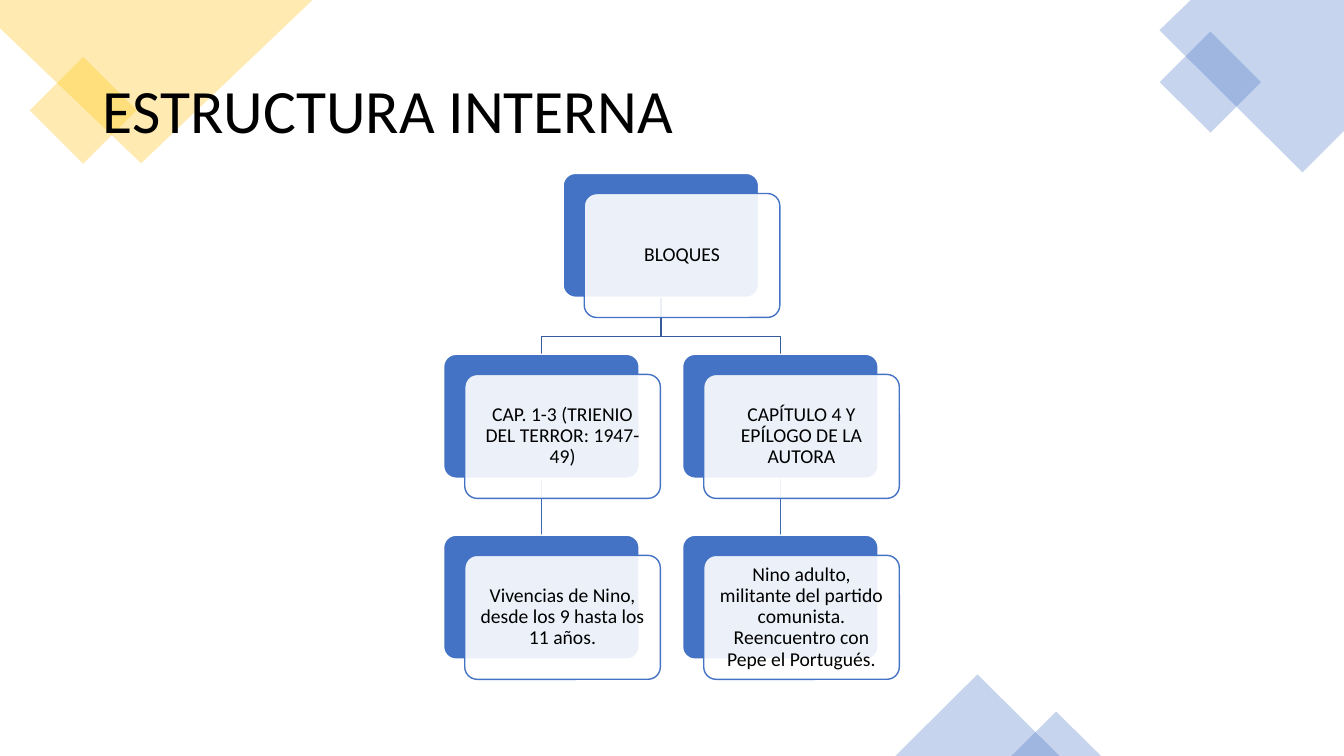
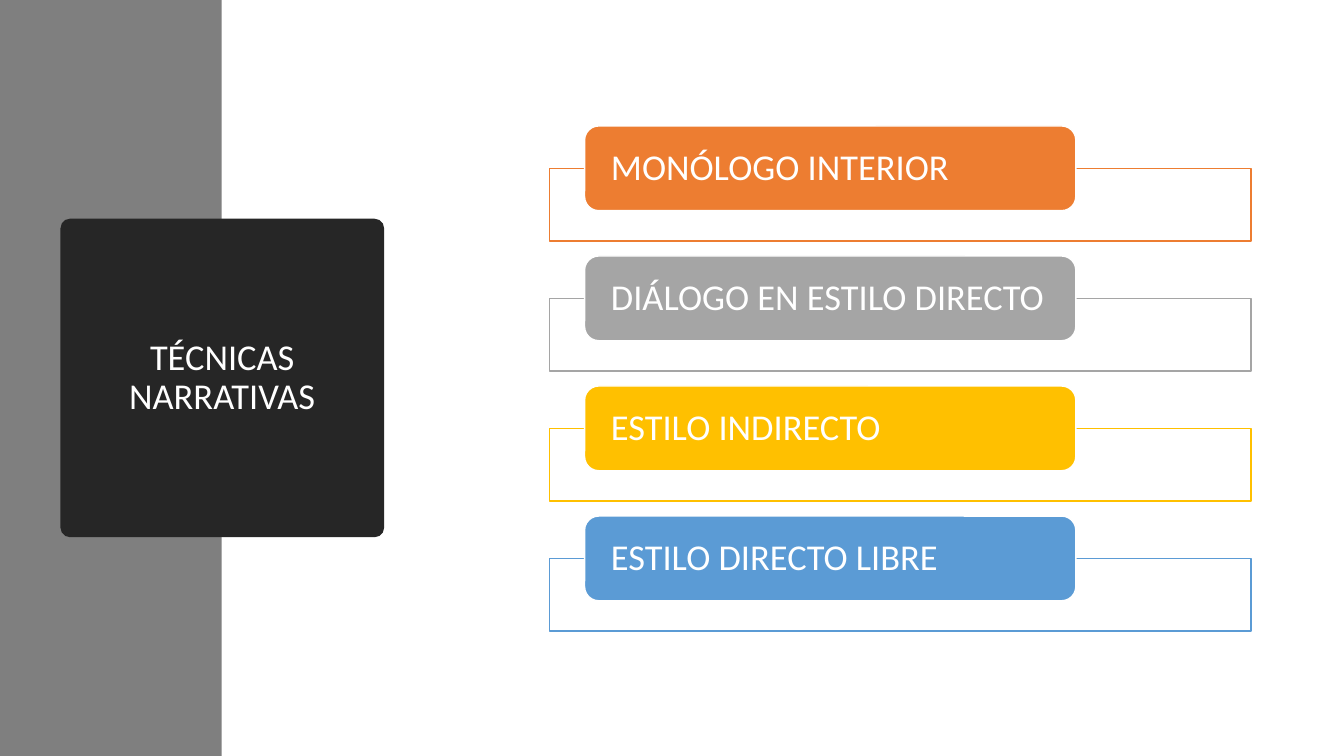
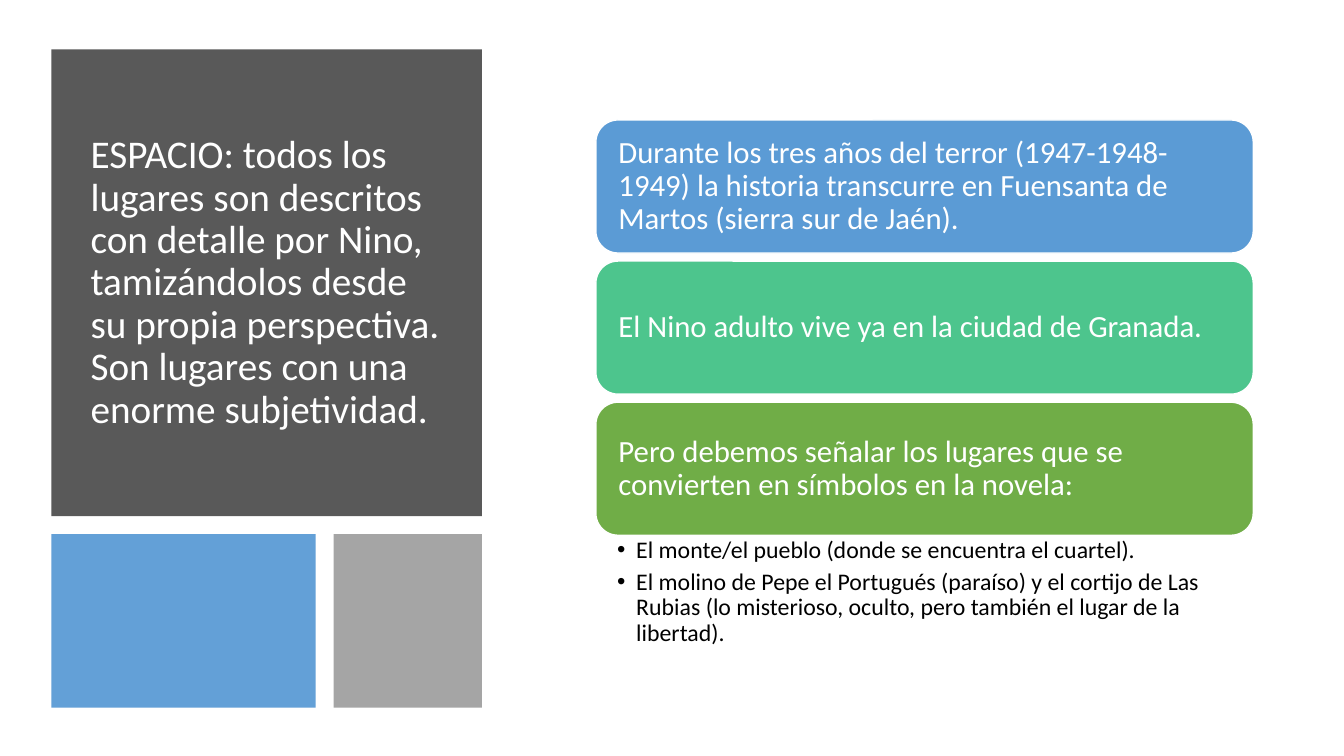
import pptx
import pptx.dml.color
import pptx.enum.shapes
import pptx.enum.text
import pptx.oxml.ns
import pptx.util
from lxml import etree

COLORS = {
    "white": "FFFFFF", "black": "000000", "blue": "4472C4", "sky": "5B9BD5",
    "gold": "FFC000", "orange": "ED7D31", "silver": "A5A5A5", "gray": "7F7F7F",
    "charcoal": "595959", "ink": "262626", "mint": "4DC58D", "green": "70AD47",
    "branch": "365B9D", "stem": "3E67B2",
}
FONT = "Calibri"
COLS, ROWS = 13.33, 7.5  # the grid has one-inch columns and rows

SHAPE = pptx.enum.shapes.MSO_SHAPE
ANCHOR = pptx.enum.text.MSO_ANCHOR
ALIGN = pptx.enum.text.PP_ALIGN
qn = pptx.oxml.ns.qn


def grid(*cells):
    return [pptx.util.Inches(c) for c in cells]


def rgb(name):
    return pptx.dml.color.RGBColor.from_string(COLORS[name])


def paint(sp, fill=None, line=None, opacity=100):
    """Set fill, opacity and outline, and drop the shadow."""
    sp.shadow.inherit = False
    if fill:
        sp.fill.solid()
        sp.fill.fore_color.rgb = rgb(fill)
        if opacity < 100:
            clr = sp._element.spPr.find(qn("a:solidFill"))[0]
            etree.SubElement(clr, qn("a:alpha"), val=str(opacity * 1000))
    else:
        sp.fill.background()
    if line:
        sp.line.color.rgb = rgb(line)
        sp.line.width = pptx.util.Pt(1)
    else:
        sp.line.fill.background()
    return sp


def add_block(slide, kind, box, fill, line=None, opacity=100, adj=None, rotation=0):
    sp = slide.shapes.add_shape(kind, *grid(*box))
    if adj is not None:
        sp.adjustments[0] = adj
    sp.rotation = rotation
    return paint(sp, fill, line, opacity)


def add_outline(slide, points, closed=True, **style):
    pts = [grid(*pt) for pt in points]
    fb = slide.shapes.build_freeform(*pts[0], scale=1.0)
    fb.add_line_segments(pts[1:], close=closed)
    return paint(fb.convert_to_shape(), **style)


def add_bullet(p, indent):
    pPr = p._p.get_or_add_pPr()
    left = pptx.util.Inches(indent)
    pPr.set("marL", str(left))
    pPr.set("indent", str(-left))
    etree.SubElement(pPr, qn("a:buFont"), typeface="Arial")
    etree.SubElement(pPr, qn("a:buChar"), char="•")


def write(sp, paragraphs, size, color, align=ALIGN.LEFT, anchor=ANCHOR.MIDDLE,
          insets=(0.1, 0.05, 0.1, 0.05), bullet=0, after=0):
    tf = sp.text_frame
    tf.word_wrap = True
    tf.vertical_anchor = anchor
    tf.margin_left, tf.margin_top, tf.margin_right, tf.margin_bottom = grid(*insets)
    for i, text in enumerate(paragraphs):
        p = tf.add_paragraph() if i else tf.paragraphs[0]
        p.alignment = align
        p.line_spacing = 0.9
        p.space_after = pptx.util.Pt(after)
        if bullet:
            add_bullet(p, bullet)
        r = p.add_run()
        r.text = text
        r.font.name = FONT
        r.font.size = pptx.util.Pt(size)
        r.font.color.rgb = rgb(color)


def add_text(slide, box, paragraphs, size, color, **style):
    write(slide.shapes.add_textbox(*grid(*box)), paragraphs, size, color, **style)


def add_corner_decor(slide):
    tint = {"opacity": 30}
    add_block(slide, SHAPE.RECTANGLE, (0.45, 0.72, 0.75, 0.75), "gold", rotation=45, **tint)
    add_outline(slide, [(0, 0), (3.1, 0), (1.4, 1.62), (0, 0.28)], fill="gold", **tint)
    add_outline(slide, [(11.81, 0), (COLS, 0), (COLS, 1.3), (12.92, 1.71), (11.5, 0.3)],
                fill="blue", **tint)
    add_block(slide, SHAPE.RECTANGLE, (11.65, 0.46, 0.71, 0.71), "blue", rotation=45, **tint)
    for x, w, h in ((8.88, 1.63, 0.81), (10.03, 0.89, 0.44)):
        add_block(slide, SHAPE.ISOSCELES_TRIANGLE, (x, ROWS - h, w, h), "blue", **tint)


def add_stem(slide):
    cxn = slide.shapes.add_connector(pptx.enum.shapes.MSO_CONNECTOR.STRAIGHT, 0, 0, 0, 0)
    cxn.line.color.rgb = rgb("stem")
    cxn.line.width = pptx.util.Pt(1)
    etree.SubElement(cxn._element.spPr, qn("a:effectLst"))
    return cxn


def add_tree_card(slide, box, text):
    """Draw a solid card with a shifted pale card on it; return the solid one."""
    x, y, w, h = box
    back = add_block(slide, SHAPE.ROUNDED_RECTANGLE, box, "blue", "white", adj=0.1)
    front = add_block(slide, SHAPE.ROUNDED_RECTANGLE, (x + 0.21, y + 0.2, w, h),
                      "white", "blue", opacity=90, adj=0.1)
    write(front, [text], 14, "black", align=ALIGN.CENTER, insets=(0.1,) * 4)
    return back


def add_tree(slide, box, root, branches):
    """Root on top, one column per branch, each a parent over a child."""
    x, y, w, h = box
    card_w, card_h = 1.94, 1.23
    col_step = (w - card_w) / (len(branches) - 1)
    row_step = (h - card_h) / 2
    root_x = x + (w - card_w) / 2
    stems = [add_stem(slide) for _ in branches]
    mid, bottom = root_x + card_w / 2, y + card_h
    for i in range(len(branches)):
        end = x + i * col_step + card_w / 2
        add_outline(slide, [(mid, bottom), (mid, bottom + 0.39), (end, bottom + 0.39),
                            (end, y + row_step)], closed=False, line="branch")
    add_tree_card(slide, (root_x, y, card_w, card_h), root)
    for i, (stem, texts) in enumerate(zip(stems, branches)):
        parent, child = [
            add_tree_card(slide, (x + i * col_step, y + row * row_step, card_w, card_h), text)
            for row, text in enumerate(texts, 1)]
        stem.begin_connect(parent, 2)
        stem.end_connect(child, 0)


def add_tab_list(slide, box, items):
    """Framed rows, each with a coloured label over its top edge."""
    x, y, w, h = box
    label_h, step = 0.84, h / len(items)
    for i, (text, color) in enumerate(items):
        top = y + i * step
        add_block(slide, SHAPE.RECTANGLE, (x, top + label_h / 2, w, 0.72), "white", color,
                  opacity=90)
        label = add_block(slide, SHAPE.ROUNDED_RECTANGLE,
                          (x + 0.05 * w, top, 0.7 * w, label_h), color, "white")
        write(label, [text], 26, "white", insets=(0.22, 0.04, 0.22, 0.04))


def add_space_panel(slide, box, text):
    """Dark title block over two colour tiles."""
    x, y, w, h = box
    gap, tile_h, tile_w = 0.18, 1.72, 2.62
    head_h = h - tile_h - gap
    add_block(slide, SHAPE.RECTANGLE, (x, y, w, head_h), "charcoal")
    add_text(slide, (x + 0.29, y + 0.53, w - 0.59, head_h - 1.05), [text], 28, "white")
    tile_y, right = y + head_h + gap, x + tile_w + gap
    add_block(slide, SHAPE.RECTANGLE, (x, tile_y, tile_w, tile_h), "sky", opacity=95)
    add_block(slide, SHAPE.RECTANGLE, (right, tile_y, x + w - right, tile_h), "silver")


def add_card_stack(slide, box, cards, bullets):
    x, y, w, h = box
    card_h, gap = 1.32, 0.08
    for i, (text, color) in enumerate(cards):
        card = add_block(slide, SHAPE.ROUNDED_RECTANGLE,
                         (x, y + i * (card_h + gap), w, card_h), color, "white")
        write(card, [text], 22, "white", insets=(0.16,) * 4)
    used = len(cards) * (card_h + gap) - gap
    add_text(slide, (x, y + used, w, h - used), bullets, 17, "black", anchor=ANCHOR.TOP,
             insets=(0.21, 0.03, 0.17, 0.03), bullet=0.19, after=4)


def build_structure(slide):
    add_corner_decor(slide)
    add_text(slide, (0.92, 0.4, 11.5, 1.45), ["ESTRUCTURA INTERNA"], 44, "black")
    add_tree(slide, (4.4, 1.72, 4.31, 4.82), "BLOQUES", [
        ("CAP. 1-3 (TRIENIO DEL TERROR: 1947-49)",
         "Vivencias de Nino, desde los 9 hasta los 11 años."),
        ("CAPÍTULO 4 Y EPÍLOGO DE LA AUTORA",
         "Nino adulto, militante del partido comunista. "
         "Reencuentro con Pepe el Portugués."),
    ])


def build_techniques(slide):
    add_block(slide, SHAPE.RECTANGLE, (0, 0, 2.2, ROWS), "gray")
    title = add_block(slide, SHAPE.ROUNDED_RECTANGLE, (0.6, 2.17, 3.21, 3.16), "ink", adj=0.03)
    write(title, ["TÉCNICAS NARRATIVAS"], 26, "white", align=ALIGN.CENTER,
          insets=(0.6, 0.5, 0.6, 0.5))
    add_tab_list(slide, (5.45, 1.25, 6.96, 5.16), [
        ("MONÓLOGO INTERIOR", "orange"),
        ("DIÁLOGO EN ESTILO DIRECTO", "silver"),
        ("ESTILO INDIRECTO", "gold"),
        ("ESTILO DIRECTO LIBRE", "sky"),
    ])


def build_space(slide):
    add_space_panel(
        slide, (0.51, 0.49, 4.27, 6.53),
        "ESPACIO: todos los lugares son descritos con detalle por Nino, tamizándolos "
        "desde su propia perspectiva. Son lugares con una enorme subjetividad.")
    add_card_stack(slide, (5.91, 1.19, 6.52, 5.28), [
        ("Durante los tres años del terror (1947-1948-1949) la historia transcurre "
         "en Fuensanta de Martos (sierra sur de Jaén).", "sky"),
        ("El Nino adulto vive ya en la ciudad de Granada.", "mint"),
        ("Pero debemos señalar los lugares que se convierten en símbolos en la novela:",
         "green"),
    ], [
        "El monte/el pueblo (donde se encuentra el cuartel).",
        "El molino de Pepe el Portugués (paraíso) y el cortijo de Las Rubias "
        "(lo misterioso, oculto, pero también el lugar de la libertad).",
    ])


def main():
    prs = pptx.Presentation()
    prs.slide_width, prs.slide_height = grid(COLS, ROWS)
    for build in (build_structure, build_techniques, build_space):
        build(prs.slides.add_slide(prs.slide_layouts[6]))
    prs.save("out.pptx")


if __name__ == "__main__":
    main()
